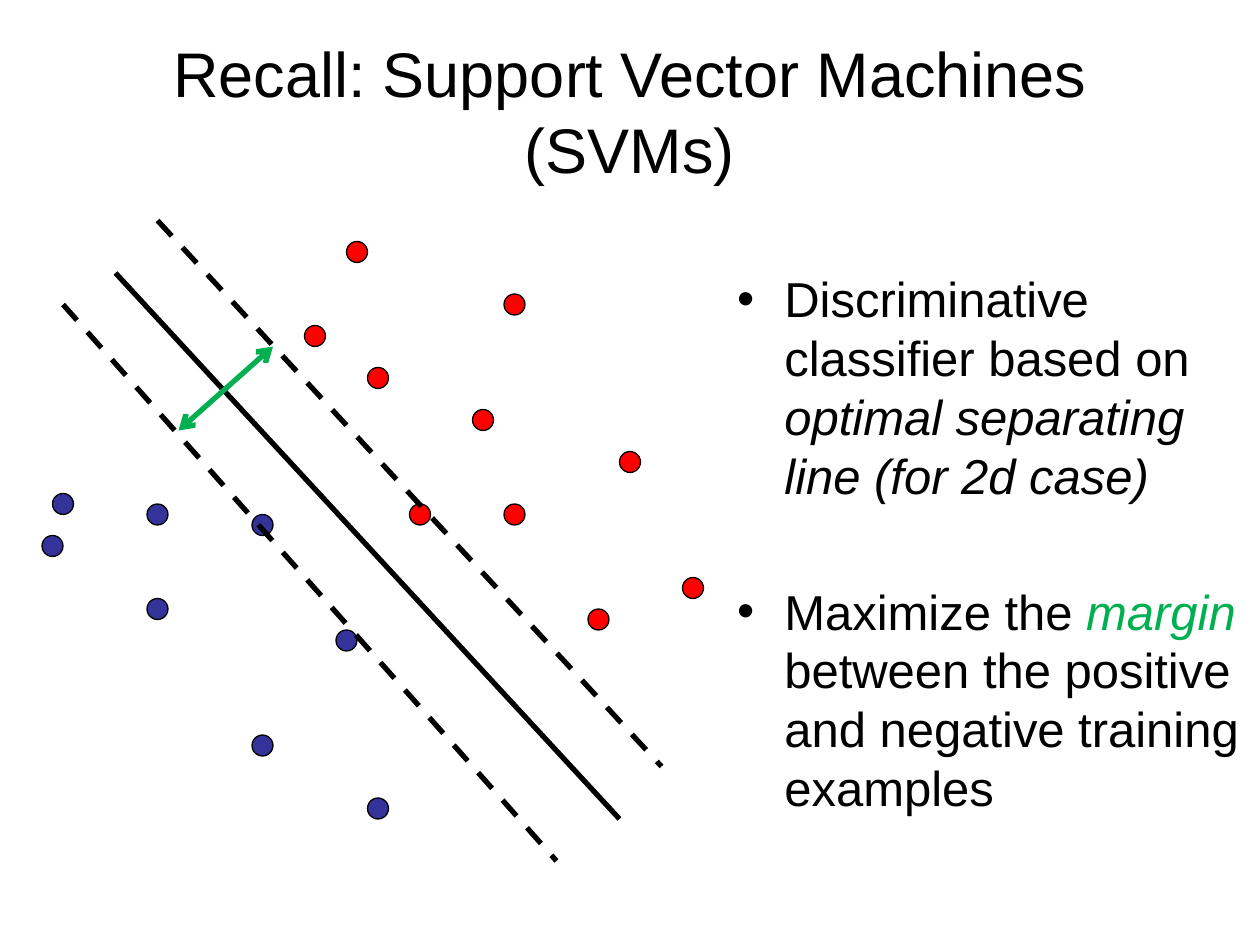
import pptx
import pptx.dml.color
import pptx.enum.dml
import pptx.enum.shapes
import pptx.enum.text
import pptx.oxml.ns
import pptx.util
from lxml import etree

Pt = pptx.util.Pt
FONT = "Arial"
COLORS = {
    "text": "000000",
    "negative": "333399",
    "positive": "FF0000",
    "margin": "00B050",
}
DOT_SIZE = 12
# Top-left corners of the training examples
NEGATIVES = [(30, 282), (84, 288), (84, 342), (24, 306),
             (144, 294), (192, 360), (144, 420), (210, 456)]
POSITIVES = [(210, 210), (270, 234), (288, 288), (234, 288), (174, 186),
             (336, 348), (354, 258), (288, 168), (390, 330), (198, 138)]


def rgb(name):
    return pptx.dml.color.RGBColor.from_string(COLORS[name])


def place(sp, left, top, width, height):
    sp.left, sp.top, sp.width, sp.height = map(Pt, (left, top, width, height))


def add_run(p, text, size, color="text", italic=False):
    r = p.add_run()
    r.text = text
    r.font.name = FONT
    r.font.size = Pt(size)
    r.font.italic = italic
    r.font.color.rgb = rgb(color)


def fill_title(sp, text):
    place(sp, 54, 18, 612, 90)
    tf = sp.text_frame
    tf.auto_size = pptx.enum.text.MSO_AUTO_SIZE.NONE
    tf.vertical_anchor = pptx.enum.text.MSO_ANCHOR.MIDDLE
    p = tf.paragraphs[0]
    p.alignment = pptx.enum.text.PP_ALIGN.CENTER
    add_run(p, text, 36)


def fill_bullets(sp, bullets):
    """Write one bullet per list of (text, color, italic) runs."""
    place(sp, 414, 150, 312, 324)
    tf = sp.text_frame
    tf.auto_size = pptx.enum.text.MSO_AUTO_SIZE.NONE
    for i, runs in enumerate(bullets):
        p = tf.add_paragraph() if i else tf.paragraphs[0]
        p.space_before = Pt(44 if i else 5.6)
        for text, color, italic in runs:
            add_run(p, text, 28, color, italic)


def add_dot(s, left, top, color):
    sp = s.shapes.add_shape(pptx.enum.shapes.MSO_SHAPE.OVAL,
                            Pt(left), Pt(top), Pt(DOT_SIZE), Pt(DOT_SIZE))
    sp.shadow.inherit = False
    sp.fill.solid()
    sp.fill.fore_color.rgb = rgb(color)
    sp.line.color.rgb = rgb("text")
    sp.line.width = Pt(0.75)


def add_line(s, start, end, color="text", dashed=False, arrows=False):
    sp = s.shapes.add_connector(pptx.enum.shapes.MSO_CONNECTOR.STRAIGHT,
                                *map(Pt, start + end))
    sp.line.color.rgb = rgb(color)
    sp.line.width = Pt(3)
    if dashed:
        sp.line.dash_style = pptx.enum.dml.MSO_LINE.DASH
    qn = pptx.oxml.ns.qn
    if arrows:
        ln = sp.line._get_or_add_ln()
        for tag in ("a:headEnd", "a:tailEnd"):
            etree.SubElement(ln, qn(tag), type="arrow")
    etree.SubElement(sp._element.spPr, qn("a:effectLst"))


def main():
    prs = pptx.Presentation()
    prs.slide_width, prs.slide_height = Pt(720), Pt(540)
    s = prs.slides.add_slide(prs.slide_layouts[1])

    fill_title(s.shapes.title, "Recall: Support Vector Machines (SVMs)")
    fill_bullets(s.placeholders[1], [
        [("Discriminative classifier based on ", "text", False),
         ("optimal separating line (for 2d case)", "text", True)],
        [("Maximize the ", "text", False),
         ("margin ", "margin", True),
         ("between the positive and negative training examples", "text", False)],
    ])

    for color, corners in (("negative", NEGATIVES), ("positive", POSITIVES)):
        for left, top in corners:
            add_dot(s, left, top, color)

    add_line(s, (36, 174), (318, 492), dashed=True)
    add_line(s, (90, 126), (378, 438), dashed=True)
    add_line(s, (66, 156), (354, 468))
    add_line(s, (102, 246), (156, 198), "margin", arrows=True)

    prs.save("out.pptx")


if __name__ == "__main__":
    main()
